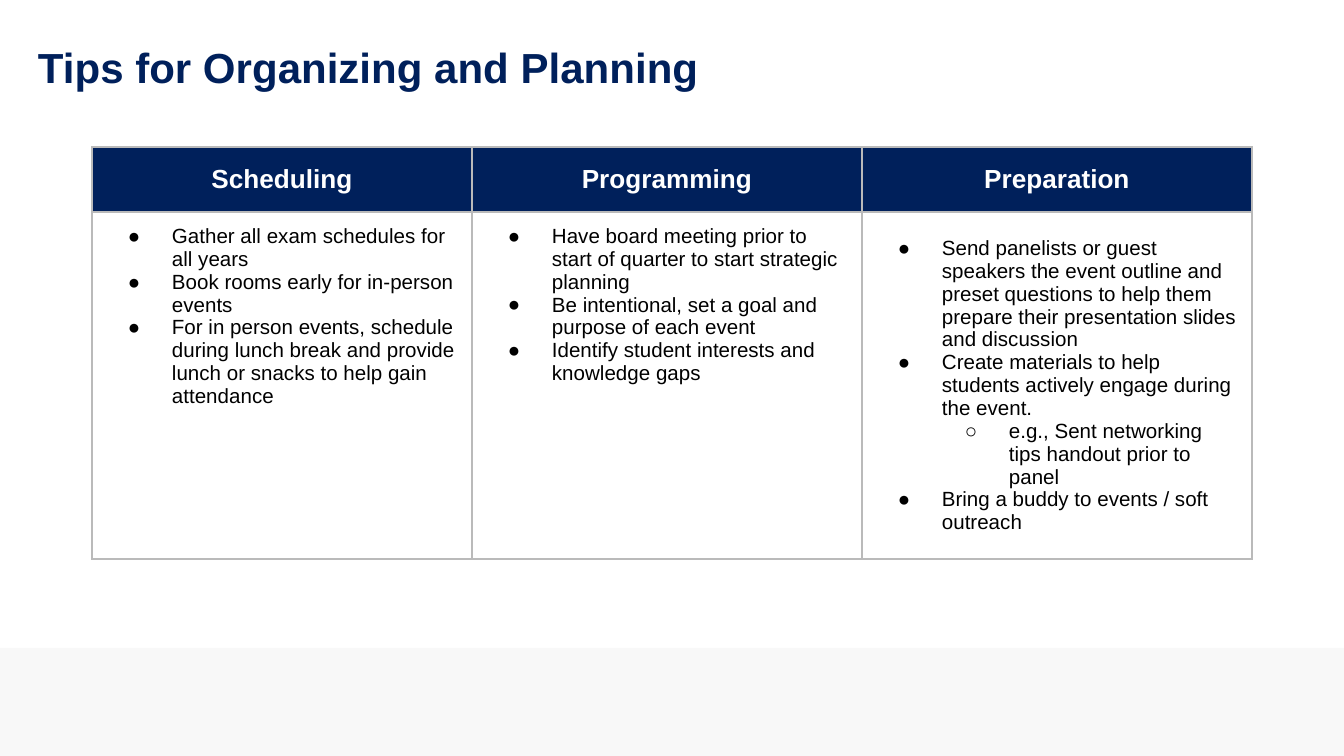
import lxml.etree
import pptx
import pptx.dml.color
import pptx.enum.shapes
import pptx.enum.text
import pptx.oxml.ns
import pptx.util

PX = 9144000 / 1344  # EMU in one px
NAVY, WHITE, BLACK = "00205B", "FFFFFF", "000000"
BAND, BORDER = "F8F8F8", "BABABA"
ALIGN = pptx.enum.text.PP_ALIGN
ANCHOR = pptx.enum.text.MSO_ANCHOR

COLUMN_WIDTHS = [380, 390, 390]
ROW_HEIGHTS = [65, 347]
# Each column: heading, body anchor, and (level, text) items
COLUMNS = [
    ("Scheduling", ANCHOR.TOP, [
        (0, "Gather all exam schedules for all years"),
        (0, "Book rooms early for in-person events"),
        (0, "For in person events, schedule during lunch break and provide "
            "lunch or snacks to help gain attendance"),
    ]),
    ("Programming", ANCHOR.TOP, [
        (0, "Have board meeting prior to start of quarter to start strategic planning"),
        (0, "Be intentional, set a goal and purpose of each event"),
        (0, "Identify student interests and knowledge gaps"),
    ]),
    ("Preparation", ANCHOR.MIDDLE, [
        (0, "Send panelists or guest speakers the event outline and preset questions "
            "to help them prepare their presentation slides and discussion"),
        (0, "Create materials to help students actively engage during the event."),
        (1, "e.g., Sent networking tips handout prior to panel"),
        (0, "Bring a buddy to events / soft outreach"),
    ]),
]


def px(length):
    return pptx.util.Emu(round(length * PX))


def color(code):
    return pptx.dml.color.RGBColor.from_string(code)


def add_element(parent, tag, **attributes):
    return lxml.etree.SubElement(parent, pptx.oxml.ns.qn(tag), attributes)


def set_font(para, size, code, bold=False):
    para.font.name = "Arial"
    para.font.size = pptx.util.Pt(size)
    para.font.bold = bold
    para.font.color.rgb = color(code)


def set_bullet(para, level):
    para.level = level
    properties = para._p.get_or_add_pPr()
    properties.set("marL", str(px(67 * (level + 1))))
    properties.set("indent", str(px(-44)))
    add_element(add_element(properties, "a:buClr"), "a:srgbClr", val=BLACK)
    add_element(properties, "a:buFont", typeface="Arial")
    add_element(properties, "a:buChar", char="●○"[level])


def add_band(page):
    band = page.shapes.add_shape(
        pptx.enum.shapes.MSO_SHAPE.RECTANGLE, px(-11), px(648), px(1403), px(121))
    band.shadow.inherit = False
    band.fill.solid()
    band.fill.fore_color.rgb = color(BAND)
    band.line.fill.background()


def set_title(page, text):
    title = page.shapes.title
    title.left, title.top, title.width, title.height = px(28), px(7), px(755), px(126)
    frame = title.text_frame
    frame.word_wrap = True
    frame.auto_size = pptx.enum.text.MSO_AUTO_SIZE.NONE
    frame.vertical_anchor = ANCHOR.MIDDLE
    frame.margin_left = frame.margin_right = px(10)
    frame.margin_top = frame.margin_bottom = px(5)
    frame.text = text
    para = frame.paragraphs[0]
    para.alignment = ALIGN.LEFT
    para.line_spacing = 0.9
    set_font(para, 22.5, NAVY, bold=True)


def style_cell(cell, fill, anchor):
    cell.margin_left = cell.margin_right = px(13)
    cell.margin_top = cell.margin_bottom = px(13)
    cell.vertical_anchor = anchor
    cell.fill.solid()
    cell.fill.fore_color.rgb = color(fill)
    # Border lines must come before the fill
    properties = cell._tc.get_or_add_tcPr()
    for position, side in enumerate(["a:lnL", "a:lnR", "a:lnT", "a:lnB"]):
        line = add_element(properties, side, w=str(pptx.util.Pt(0.75)))
        add_element(add_element(line, "a:solidFill"), "a:srgbClr", val=BORDER)
        properties.insert(position, line)


def fill_heading(cell, text):
    style_cell(cell, NAVY, ANCHOR.MIDDLE)
    cell.text = text
    para = cell.text_frame.paragraphs[0]
    para.alignment = ALIGN.CENTER
    set_font(para, 14, WHITE, bold=True)


def fill_list(cell, anchor, items):
    style_cell(cell, WHITE, anchor)
    cell.text = "\n".join(text for _, text in items)
    for para, (level, _) in zip(cell.text_frame.paragraphs, items):
        set_bullet(para, level)
        set_font(para, 11, BLACK)


def add_tips_table(page):
    table = page.shapes.add_table(
        len(ROW_HEIGHTS), len(COLUMNS), px(92), px(147),
        px(sum(COLUMN_WIDTHS)), px(sum(ROW_HEIGHTS))).table
    table.horz_banding = False
    for row, height in zip(table.rows, ROW_HEIGHTS):
        row.height = px(height)
    for index, (heading, anchor, items) in enumerate(COLUMNS):
        table.columns[index].width = px(COLUMN_WIDTHS[index])
        fill_heading(table.cell(0, index), heading)
        fill_list(table.cell(1, index), anchor, items)


def main():
    deck = pptx.Presentation()
    deck.slide_width, deck.slide_height = px(1344), px(756)
    page = deck.slides.add_slide(deck.slide_layouts[5])  # Title Only
    add_band(page)
    set_title(page, "Tips for Organizing and Planning")
    add_tips_table(page)
    deck.save("out.pptx")


if __name__ == "__main__":
    main()
